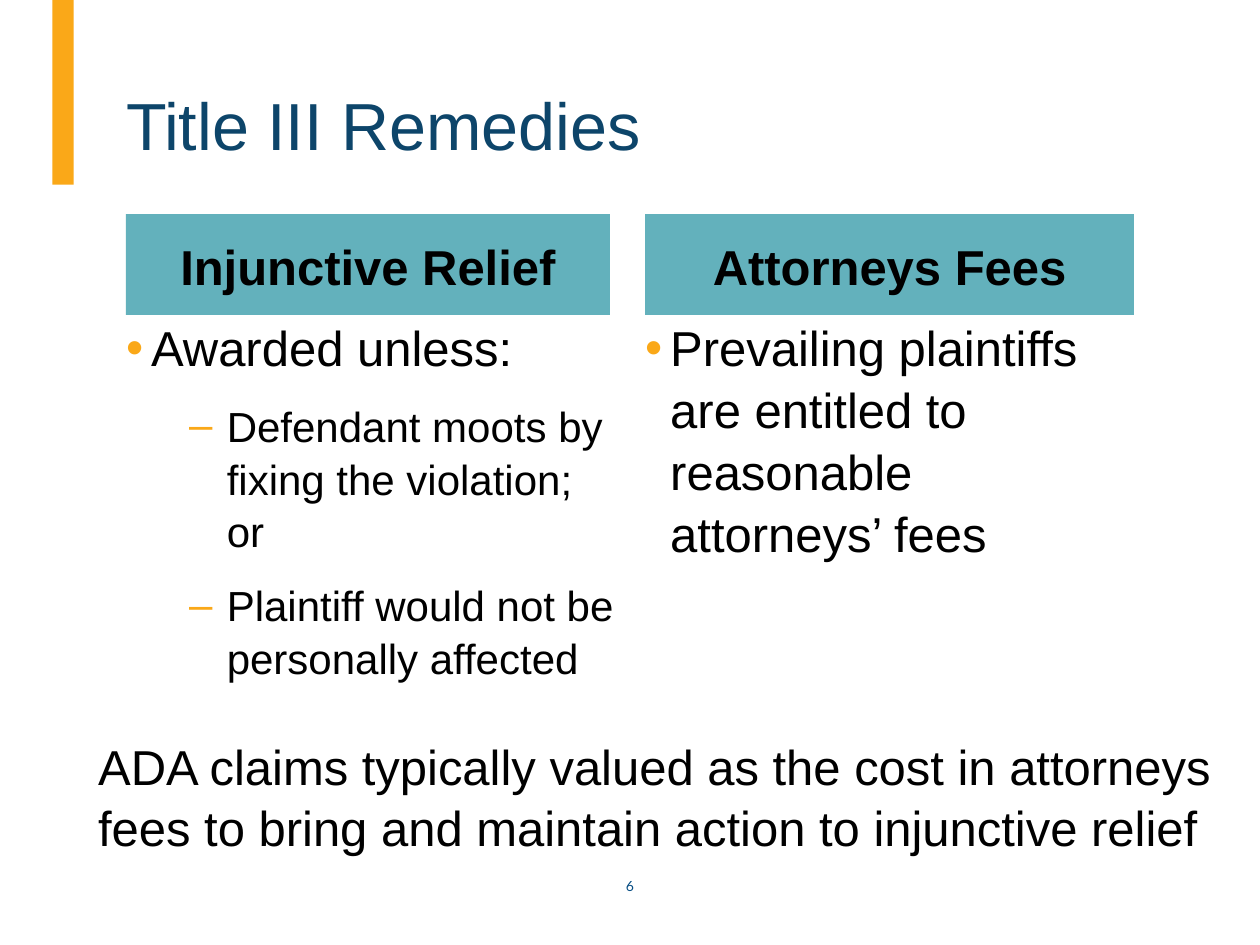
"""Build the Title III Remedies slide."""
from dataclasses import dataclass

from lxml import etree
from pptx import Presentation
from pptx import util as u
from pptx.dml.color import RGBColor
from pptx.enum import shapes, text
from pptx.oxml.ns import qn


@dataclass(frozen=True)
class Theme:
    font: str = "Arial"
    number_font: str = "Lato"
    accent: str = "FAA818"
    title: str = "0D456A"
    number: str = "064D83"
    header: str = "63B1BC"
    body: str = "000000"
    title_size: int = 38
    body_size: int = 28
    sub_size: int = 24
    number_size: int = 8
    line_spacing: float = 1.05
    space_after: int = 12


THEME = Theme()
TITLE = "Title III Remedies"
COLUMNS = [
    {"left": 72, "header_width": 276.5, "header": "Injunctive Relief",
     "points": [(0, "Awarded unless:"),
                (1, "Defendant moots by fixing the violation; or"),
                (1, "Plaintiff would not be personally affected")]},
    {"left": 368.6, "header_width": 279.4, "header": "Attorneys Fees",
     "points": [(0, "Prevailing plaintiffs are entitled to reasonable attorneys’ fees")]},
]
SUMMARY = ("ADA claims typically valued as the cost in attorneys fees "
           "to bring and maintain action to injunctive relief")
NUMBER = "6"
LEVELS = [("•", 14.4, -14.4, THEME.body_size), ("–", 57.6, -21.6, THEME.sub_size)]
HEADER_TOP, HEADER_HEIGHT = 122.4, 57.6
LIST_WIDTH, LIST_HEIGHT = 279.4, 237.6


def points(*lengths):
    return [u.Pt(length) for length in lengths]


def set_frame(shape, anchor=text.MSO_ANCHOR.TOP, inset=0):
    frame = shape.text_frame
    frame.word_wrap = True
    frame.auto_size = text.MSO_AUTO_SIZE.NONE
    frame.vertical_anchor = anchor
    frame.margin_left = frame.margin_right = u.Pt(inset)
    frame.margin_top = frame.margin_bottom = u.Pt(inset / 2)
    return frame


def write(para, words, size, color=THEME.body, font=THEME.font, bold=False,
          align=text.PP_ALIGN.LEFT):
    para.text = words
    para.alignment = align
    para.font.name = font
    para.font.size = u.Pt(size)
    para.font.bold = bold
    para.font.color.rgb = RGBColor.from_string(color)


def space(para):
    para.line_spacing = THEME.line_spacing
    para.space_before = u.Pt(0)
    para.space_after = u.Pt(THEME.space_after)


def add_bullet(para, mark, margin, indent):
    props = para._p.get_or_add_pPr()
    props.set("marL", str(u.Pt(margin)))
    props.set("indent", str(u.Pt(indent)))
    color = etree.SubElement(props, qn("a:buClr"))
    etree.SubElement(color, qn("a:srgbClr"), val=THEME.accent)
    etree.SubElement(props, qn("a:buFont"), typeface=THEME.font)
    etree.SubElement(props, qn("a:buChar"), char=mark)


def add_block(slide, color, *place):
    block = slide.shapes.add_shape(shapes.MSO_SHAPE.RECTANGLE, *points(*place))
    block.shadow.inherit = False
    block.fill.solid()
    block.fill.fore_color.rgb = RGBColor.from_string(color)
    block.line.fill.background()
    return block


def add_title(slide):
    title = slide.shapes.title
    title.left, title.top, title.width, title.height = points(72, 28.1, 576, 65.5)
    frame = set_frame(title, text.MSO_ANCHOR.BOTTOM)
    write(frame.paragraphs[0], TITLE, THEME.title_size, THEME.title)


def add_column(slide, column):
    left = column["left"]
    header = add_block(slide, THEME.header, left, HEADER_TOP,
                       column["header_width"], HEADER_HEIGHT)
    para = set_frame(header, text.MSO_ANCHOR.MIDDLE).paragraphs[0]
    space(para)
    write(para, column["header"], THEME.body_size, bold=True, align=text.PP_ALIGN.CENTER)

    box = slide.shapes.add_textbox(
        *points(left, HEADER_TOP + HEADER_HEIGHT, LIST_WIDTH, LIST_HEIGHT))
    frame = set_frame(box)
    for index, (level, words) in enumerate(column["points"]):
        para = frame.add_paragraph() if index else frame.paragraphs[0]
        mark, margin, indent, size = LEVELS[level]
        para.level = level
        space(para)
        add_bullet(para, mark, margin, indent)
        write(para, words, size)


def main():
    deck = Presentation()
    deck.slide_width, deck.slide_height = points(720, 540)
    slide = deck.slides.add_slide(deck.slide_layouts[5])
    add_block(slide, THEME.accent, 30, 0, 12.2, 105.6)
    add_title(slide)
    for column in COLUMNS:
        add_column(slide, column)

    summary = slide.shapes.add_textbox(*points(49, 415.4, 671, 74.9))
    para = set_frame(summary, inset=7.2).paragraphs[0]
    space(para)
    write(para, SUMMARY, THEME.body_size)

    number = slide.shapes.add_textbox(*points(324, 500.4, 72, 12.2))
    para = set_frame(number, text.MSO_ANCHOR.MIDDLE).paragraphs[0]
    write(para, NUMBER, THEME.number_size, THEME.number, THEME.number_font,
          align=text.PP_ALIGN.CENTER)
    deck.save("out.pptx")


if __name__ == "__main__":
    main()
